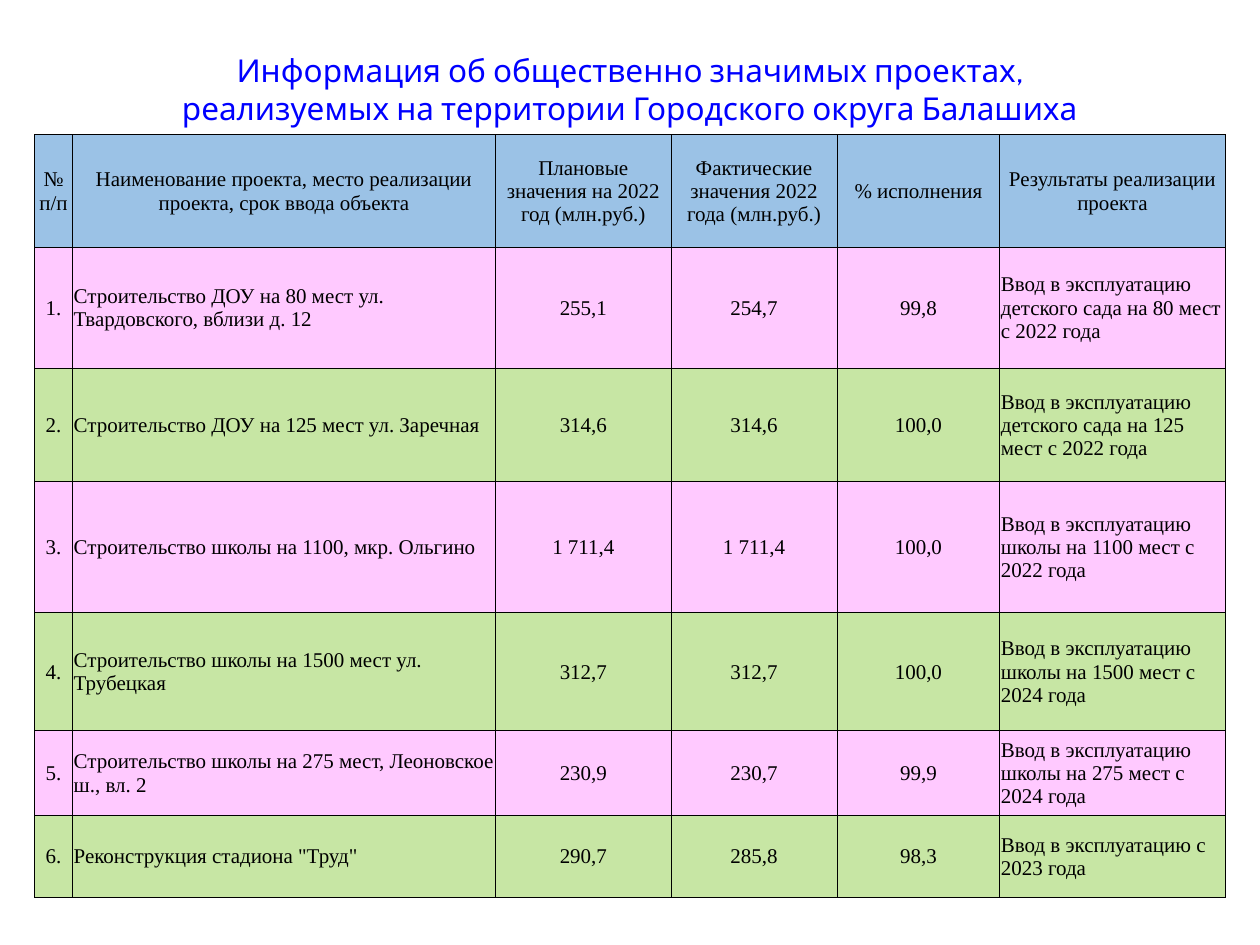
from lxml import etree
from pptx import Presentation, util as u
from pptx.dml.color import RGBColor
from pptx.enum import text
from pptx.oxml.ns import qn

COLORS = {
    "title": "0000FF",
    "text": "000000",
    "border": "000000",
    "header": "9BC2E6",
    "odd": "FFC9FF",
    "even": "C7E6A4",
}
TITLE = ("Информация об общественно значимых проектах, "
         "реализуемых на территории Городского округа Балашиха")
HEADER = ("№ п/п", "Наименование проекта, место реализации проекта, срок ввода объекта",
          "Плановые значения на 2022 год (млн.руб.)",
          "Фактические значения 2022 года (млн.руб.)",
          "% исполнения", "Результаты реализации проекта")
PROJECTS = [
    ("Строительство ДОУ на 80 мест ул. Твардовского, вблизи д. 12",
     "255,1", "254,7", "99,8", "детского сада на 80 мест с 2022 года"),
    ("Строительство ДОУ на 125 мест ул. Заречная",
     "314,6", "314,6", "100,0", "детского сада на 125 мест с 2022 года"),
    ("Строительство школы на 1100, мкр. Ольгино",
     "1 711,4", "1 711,4", "100,0", "школы на 1100 мест с 2022 года"),
    ("Строительство школы на 1500 мест ул. Трубецкая",
     "312,7", "312,7", "100,0", "школы на 1500 мест с 2024 года"),
    ("Строительство школы на 275 мест, Леоновское ш., вл. 2",
     "230,9", "230,7", "99,9", "школы на 275 мест с 2024 года"),
    ('Реконструкция стадиона "Труд"',
     "290,7", "285,8", "98,3", "с 2023 года"),
]
# Shares of the slide's width and height, in percent
COLUMN_WIDTHS = (3, 33.6, 13.9, 13.2, 12.9, 17.9)
ROW_HEIGHTS = (11.87, 12.8, 12, 13.87, 12.53, 8.93, 8.67)
LEFT_ALIGNED = (1, 5)


class SlideBuilder:
    """Places elements by percent shares of the slide's size."""

    title_font, title_size = "Cabin", 18
    table_font, table_size = "Times New Roman", 12

    def __init__(self, presentation):
        self.width = presentation.slide_width
        self.height = presentation.slide_height
        self.slide = presentation.slides.add_slide(presentation.slide_layouts[6])

    def across(self, percent):
        return round(self.width * percent / 100)

    def down(self, percent):
        return round(self.height * percent / 100)

    def add_words(self, paragraph, words, font, size, color, align):
        paragraph.alignment = align
        run = paragraph.add_run()
        run.text = words
        run.font.name = font
        run.font.size = u.Pt(size)
        run.font.color.rgb = RGBColor.from_string(COLORS[color])

    def title(self, words, left, top, width, height):
        box = self.slide.shapes.add_textbox(
            self.across(left), self.down(top), self.across(width), self.down(height))
        box.text_frame.word_wrap = True
        self.add_words(box.text_frame.paragraphs[0], words, self.title_font,
                       self.title_size, "title", text.PP_ALIGN.CENTER)

    def table(self, rows, left, top):
        frame = self.slide.shapes.add_table(
            len(rows), len(COLUMN_WIDTHS), self.across(left), self.down(top),
            self.across(sum(COLUMN_WIDTHS)), self.down(sum(ROW_HEIGHTS)))
        table = frame.table
        for column, width in zip(table.columns, COLUMN_WIDTHS):
            column.width = self.across(width)
        for row, height in zip(table.rows, ROW_HEIGHTS):
            row.height = self.down(height)
        for r, values in enumerate(rows):
            fill = "header" if r == 0 else "odd" if r % 2 else "even"
            for c, words in enumerate(values):
                is_left = r > 0 and c in LEFT_ALIGNED
                align = text.PP_ALIGN.LEFT if is_left else text.PP_ALIGN.CENTER
                self.cell(table.cell(r, c), words, fill, align)

    def cell(self, cell, words, fill, align):
        cell.margin_left = cell.margin_right = cell.margin_top = u.Inches(0.01)
        cell.margin_bottom = 0
        cell.vertical_anchor = text.MSO_ANCHOR.MIDDLE
        self.add_words(cell.text_frame.paragraphs[0], words, self.table_font,
                       self.table_size, "text", align)
        self.borders(cell)
        cell.fill.solid()
        cell.fill.fore_color.rgb = RGBColor.from_string(COLORS[fill])

    def borders(self, cell):
        properties = cell._tc.get_or_add_tcPr()
        for side in ("lnL", "lnR", "lnT", "lnB"):
            line = etree.SubElement(properties, qn(f"a:{side}"), w=str(u.Pt(0.5)))
            solid = etree.SubElement(line, qn("a:solidFill"))
            etree.SubElement(solid, qn("a:srgbClr"), val=COLORS["border"])


def main():
    presentation = Presentation()
    presentation.slide_width, presentation.slide_height = u.Inches(10), u.Inches(7.5)
    builder = SlideBuilder(presentation)
    builder.title(TITLE, 12.2, 4.8, 75.6, 13.47)
    rows = [HEADER]
    for number, (*values, result) in enumerate(PROJECTS, start=1):
        rows.append((f"{number}.", *values, f"Ввод в эксплуатацию {result}"))
    builder.table(rows, 2.75, 14.27)
    presentation.save("out.pptx")


if __name__ == "__main__":
    main()
